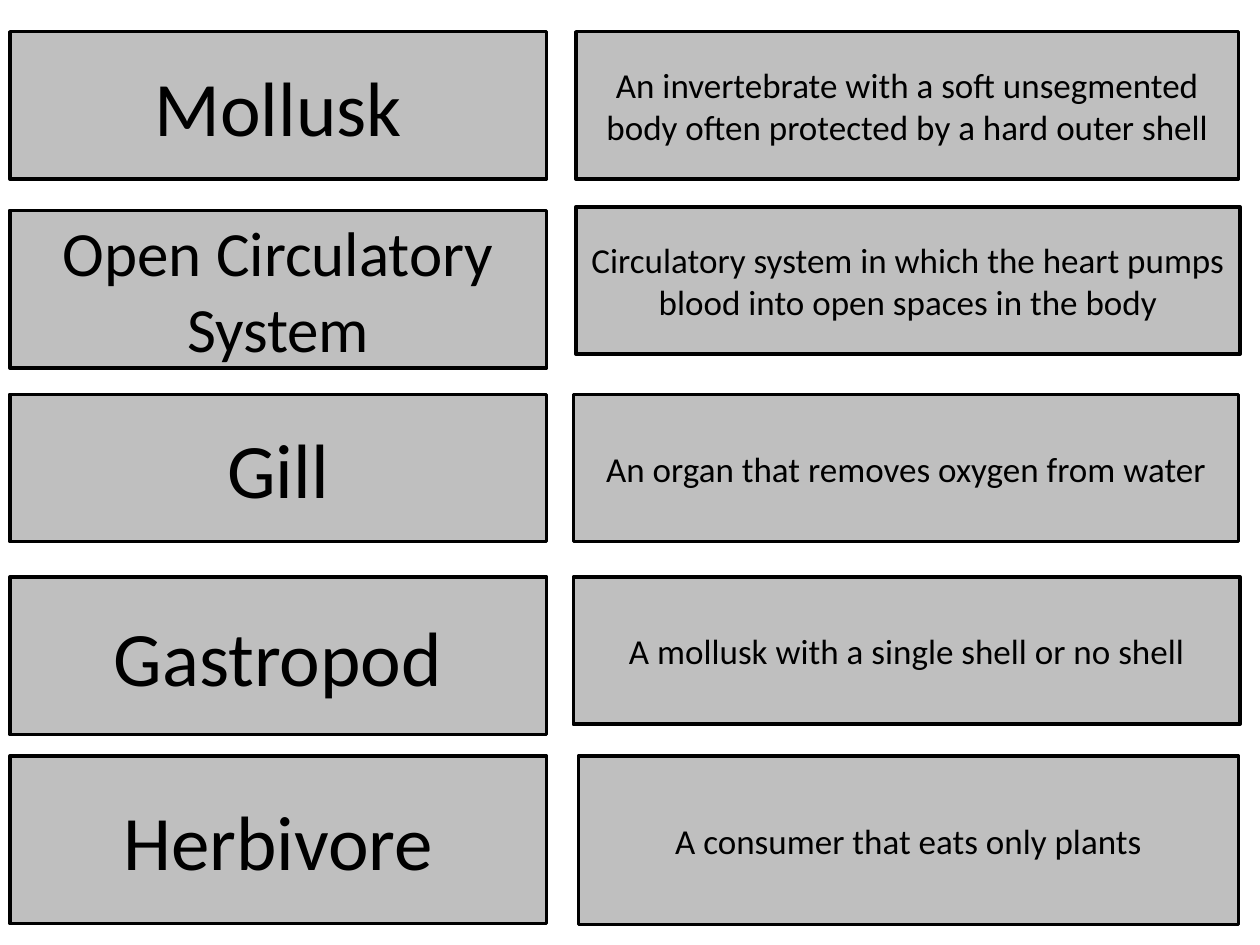
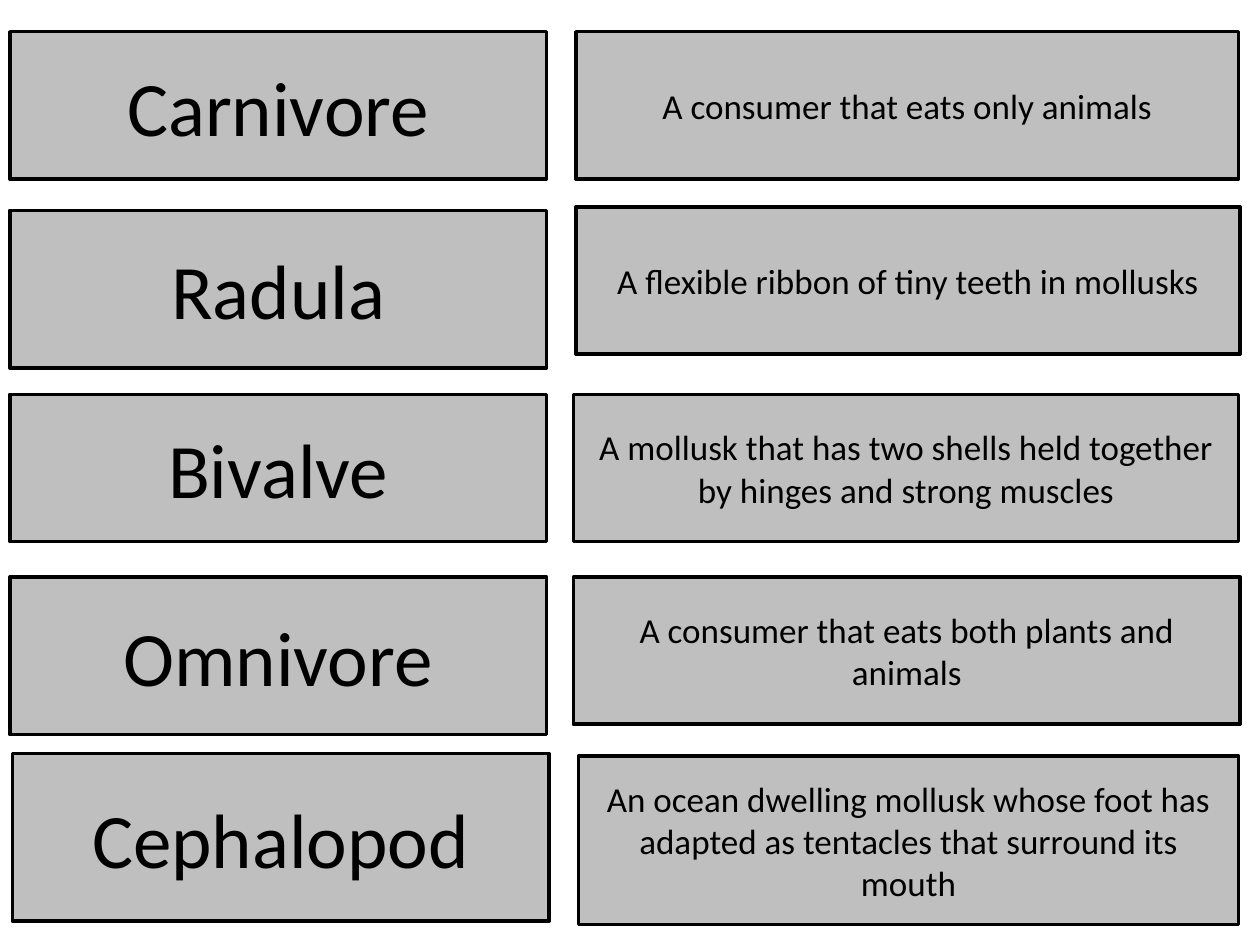
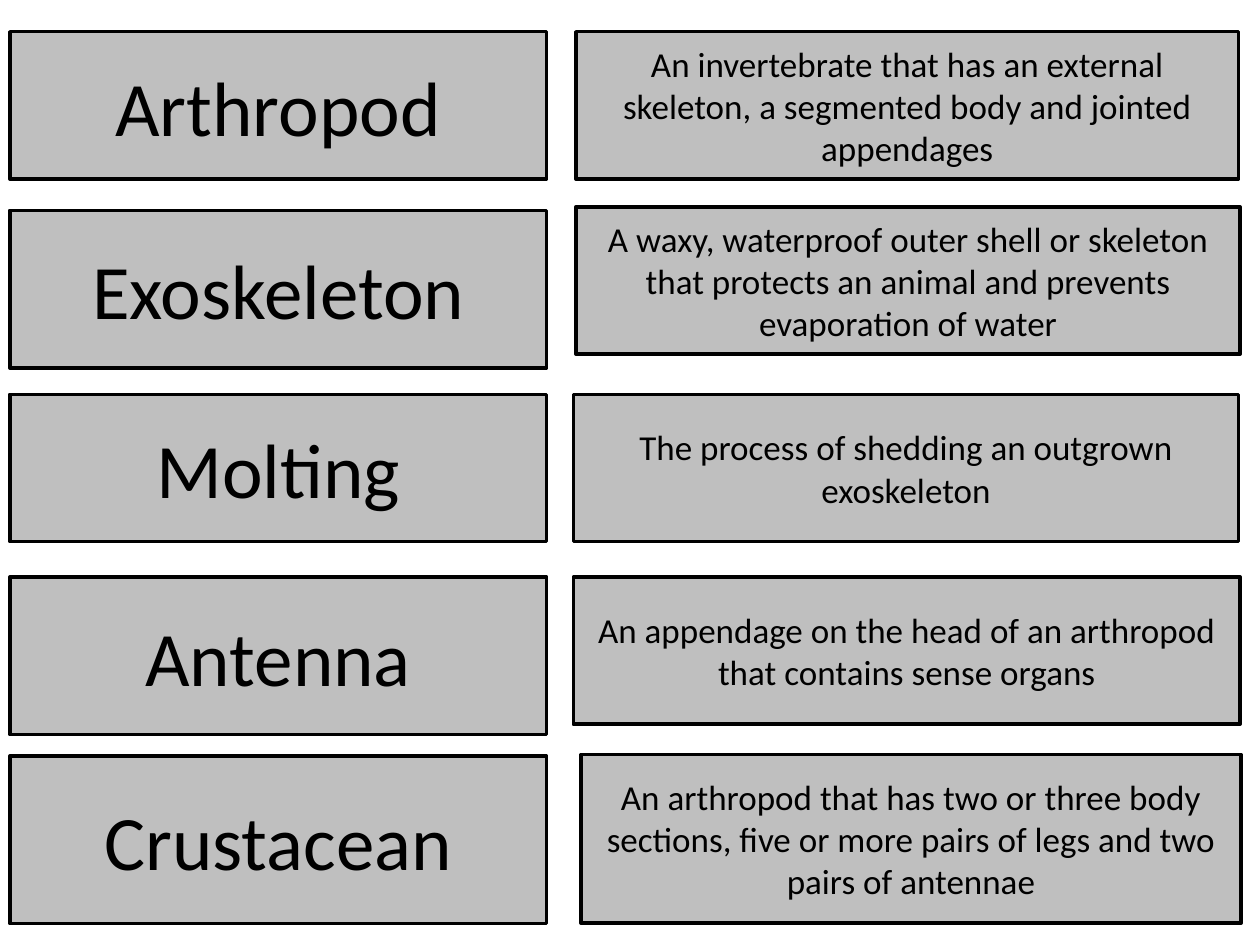
"""Build three slides of vocabulary cards, each term beside its definition."""
from pptx import Presentation
from pptx.dml.color import RGBColor
from pptx.enum.shapes import MSO_SHAPE
from pptx.enum.text import MSO_ANCHOR, PP_ALIGN
from pptx.util import Cm, Pt

CARD_SHAPE = MSO_SHAPE.FLOWCHART_PROCESS
MIDDLE = MSO_ANCHOR.MIDDLE
CENTER = PP_ALIGN.CENTER

BLACK = RGBColor(0x00, 0x00, 0x00)
GREY = RGBColor(0xBF, 0xBF, 0xBF)
FONT = "Calibri"
TERM_SIZE = 44
LONG_TERM_SIZE = 36
LONG_TERM_LENGTH = 15
DEFINITION_SIZE = 20
BLANK_LAYOUT = 6

TERM_LEFT = 0.2
TERM_WIDTH = 10.82
TERM_ROWS = [(0.64, 2.97), (4.24, 3.18), (7.95, 2.97), (11.63, 3.18), (15.24, 3.38)]
DEFINITION_BOXES = [
    (11.61, 0.64, 13.36, 2.97),
    (11.61, 4.17, 13.39, 2.97),
    (11.56, 7.95, 13.41, 2.97),
    (11.56, 11.63, 13.44, 2.97),
    (11.66, 15.24, 13.31, 3.4),
]
NUDGES = {"Cephalopod": (0.05, -0.05)}
DEFINITION_NUDGES = {"Crustacean": (0.05, -0.03)}

VOCABULARY = [
    [
        ("Mollusk", "An invertebrate with a soft unsegmented body often protected by a hard outer shell"),
        ("Open Circulatory System",
         "Circulatory system in which the heart pumps blood into open spaces in the body"),
        ("Gill", "An organ that removes oxygen from water"),
        ("Gastropod", "A mollusk with a single shell or no shell"),
        ("Herbivore", "A consumer that eats only plants"),
    ],
    [
        ("Carnivore", "A consumer that eats only animals"),
        ("Radula", "A flexible ribbon of tiny teeth in mollusks"),
        ("Bivalve", "A mollusk that has two shells held together by hinges and strong muscles"),
        ("Omnivore", "A consumer that eats both plants and animals"),
        ("Cephalopod",
         "An ocean dwelling mollusk whose foot has adapted as tentacles that surround its mouth"),
    ],
    [
        ("Arthropod",
         "An invertebrate that has an external skeleton, a segmented body and jointed appendages"),
        ("Exoskeleton",
         "A waxy, waterproof outer shell or skeleton that protects an animal "
         "and prevents evaporation of water"),
        ("Molting", "The process of shedding an outgrown exoskeleton"),
        ("Antenna", "An appendage on the head of an arthropod that contains sense organs"),
        ("Crustacean",
         "An arthropod that has two or three body sections, five or more pairs of legs "
         "and two pairs of antennae"),
    ],
]


def write_text(text_frame, text, *, size, color=BLACK, font=FONT, align=CENTER, anchor=MIDDLE):
    """Write one formatted paragraph into a text frame."""
    text_frame.word_wrap = True
    text_frame.vertical_anchor = anchor
    paragraph = text_frame.paragraphs[0]
    paragraph.alignment = align
    run = paragraph.add_run()
    run.text = text
    run.font.name = font
    run.font.size = Pt(size)
    run.font.color.rgb = color


class CardDeck:
    """Hold the card style and the current slide."""

    def __init__(self):
        """Start an empty presentation of 10 by 7.5 inches."""
        self.presentation = Presentation()
        self.presentation.slide_width = Cm(25.4)
        self.presentation.slide_height = Cm(19.05)
        self.slide = None

    def add_slide(self):
        """Add a blank slide and make it current."""
        layout = self.presentation.slide_layouts[BLANK_LAYOUT]
        self.slide = self.presentation.slides.add_slide(layout)

    def add_card(self, text, box, size, nudge=(0, 0)):
        """Draw one outlined grey card with centred text."""
        left, top, width, height = box
        shape = self.slide.shapes.add_shape(
            CARD_SHAPE, Cm(left + nudge[0]), Cm(top + nudge[1]), Cm(width), Cm(height))
        shape.shadow.inherit = False
        shape.fill.solid()
        shape.fill.fore_color.rgb = GREY
        shape.line.color.rgb = BLACK
        shape.line.width = Pt(2)
        write_text(shape.text_frame, text, size=size)

    def add_term(self, term, row):
        """Draw the term card of a row, smaller in type when the term is long."""
        top, height = TERM_ROWS[row]
        size = LONG_TERM_SIZE if len(term) > LONG_TERM_LENGTH else TERM_SIZE
        self.add_card(term, (TERM_LEFT, top, TERM_WIDTH, height), size, NUDGES.get(term, (0, 0)))

    def add_definition(self, term, definition, row):
        """Draw the definition card of a row."""
        nudge = DEFINITION_NUDGES.get(term, (0, 0))
        self.add_card(definition, DEFINITION_BOXES[row], DEFINITION_SIZE, nudge)


def main():
    """Build every slide and save the presentation."""
    deck = CardDeck()
    for entries in VOCABULARY:
        deck.add_slide()
        for row, (term, definition) in enumerate(entries):
            deck.add_term(term, row)
            deck.add_definition(term, definition, row)
    deck.presentation.save("out.pptx")


if __name__ == "__main__":
    main()
